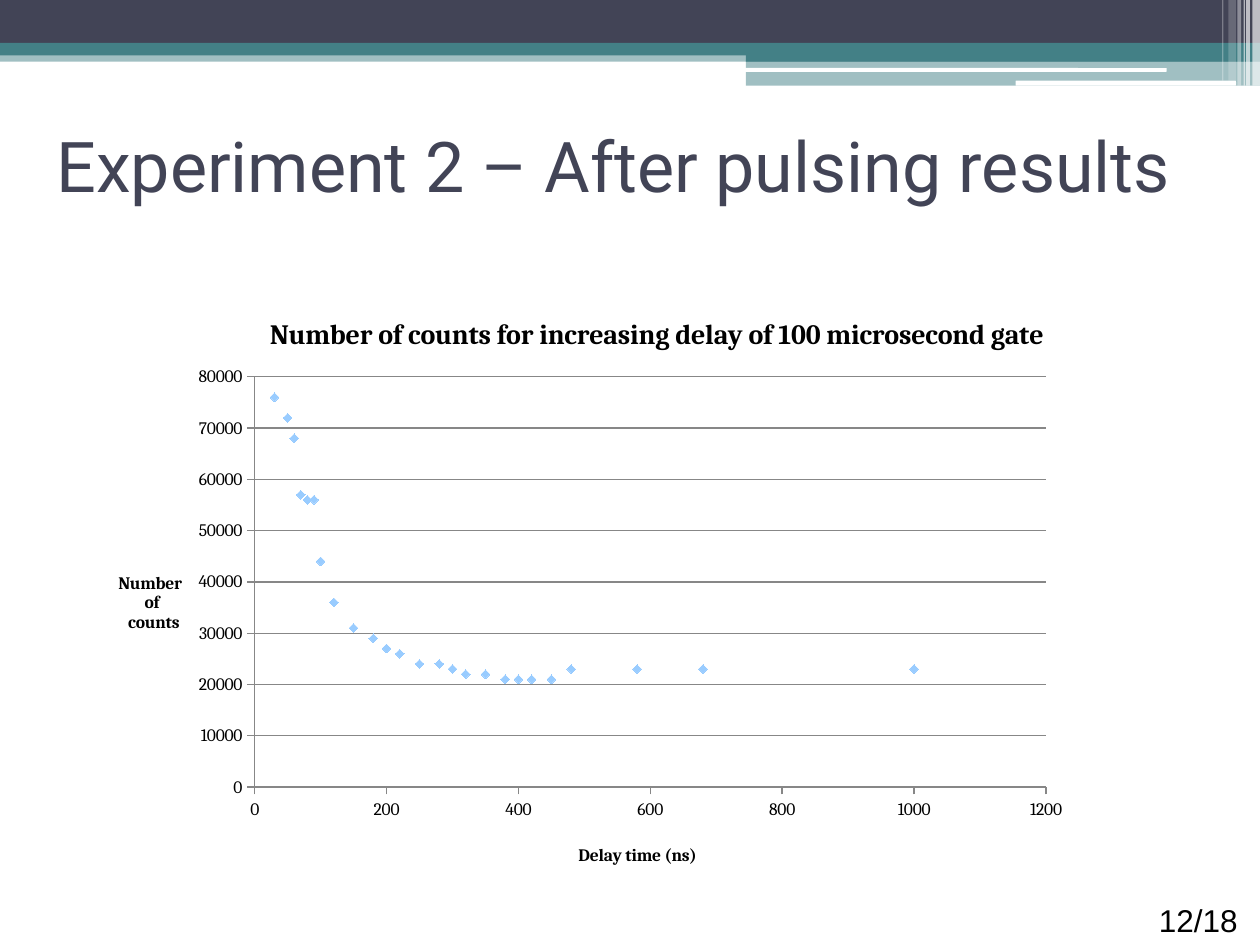
"""Build the after pulsing results slide with its scatter chart."""
import lxml.etree
import pptx
import pptx.chart.data
import pptx.dml.color
import pptx.enum.chart
import pptx.enum.shapes
import pptx.enum.text
import pptx.oxml
import pptx.oxml.ns
import pptx.util

Inches = pptx.util.Inches
Pt = pptx.util.Pt
qn = pptx.oxml.ns.qn


def paint(fill, color, alpha=100):
    fill.solid()
    fill.fore_color.rgb = pptx.dml.color.RGBColor.from_string(color)
    if alpha < 100:
        node = fill._xPr.find(".//" + qn("a:srgbClr"))
        lxml.etree.SubElement(node, qn("a:alpha")).set("val", str(alpha * 1000))


def place(node, index, **spots):
    old = node.find(qn("c:layout"))
    if old is not None:
        node.remove(old)
    layout = pptx.oxml.parse_xml(f'<c:layout {pptx.oxml.ns.nsdecls("c")}/>')
    manual = lxml.etree.SubElement(layout, qn("c:manualLayout"))
    for tag, value in spots.items():
        lxml.etree.SubElement(manual, qn("c:" + tag)).set("val", str(value))
    node.insert(index, layout)


deck = pptx.Presentation()
deck.slide_width, deck.slide_height = Inches(10), Inches(7.5)
slide = deck.slides.add_slide(deck.slide_layouts[6])

bars = [
    (0, 0.4, 10, 0.09, "438086", 50),
    (0, 0, 10, 0.34, "424456", 100),
    (0, 0.34, 10, 0.1, "438086", 100),
    (5.92, 0.39, 4.08, 0.1, "438086", 100),
    (5.92, 0.48, 4.08, 0.2, "438086", 50),
    (5.91, 0.54, 3.35, 0.03, "FFFFFF", 100),
    (8.06, 0.64, 1.75, 0.04, "FFFFFF", 100),
    (9.94, 0, 0.06, 0.68, "FFFFFF", 65),
    (9.89, 0, 0.03, 0.68, "FFFFFF", 65),
    (9.87, 0, 0.01, 0.68, "FFFFFF", 60),
    (9.82, 0, 0.03, 0.68, "FFFFFF", 40),
    (9.75, 0, 0.06, 0.64, "FFFFFF", 20),
    (9.7, 0, 0.01, 0.64, "FFFFFF", 30),
]
kinds = pptx.enum.shapes.MSO_SHAPE
for left, top, width, height, color, alpha in bars:
    solid = color == "FFFFFF" and alpha == 100
    kind = kinds.ROUNDED_RECTANGLE if solid else kinds.RECTANGLE
    bar = slide.shapes.add_shape(
        kind, Inches(left), Inches(top), Inches(width), Inches(height))
    bar.shadow.inherit = False
    bar.line.fill.background()
    paint(bar.fill, color, alpha)

anchors = pptx.enum.text.MSO_ANCHOR
labels = [
    ("Experiment 2 – After pulsing results", (0.35, 0.68, 9.33, 1.25),
     40, "Roboto", "424456", anchors.MIDDLE),
    ("12/18", (9.1, 7.1, 0.9, 0.4), 18, "Arial", "000000", anchors.TOP),
]
for text, spot, size, face, color, anchor in labels:
    box = slide.shapes.add_textbox(*map(Inches, spot))
    frame = box.text_frame
    frame.word_wrap = True
    frame.vertical_anchor = anchor
    frame.text = text
    font = frame.paragraphs[0].runs[0].font
    font.size, font.name = Pt(size), face
    paint(font.fill, color)

delays = [30, 50, 60, 70, 80, 90, 100, 120, 150, 180, 200, 220, 250, 280, 300,
          320, 350, 380, 400, 420, 450, 480, 580, 680, 1000]
counts = [76, 72, 68, 57, 56, 56, 44, 36, 31, 29, 27, 26, 24, 24, 23,
          22, 22, 21, 21, 21, 21, 23, 23, 23, 23]
data = pptx.chart.data.XyChartData()
series = data.add_series("Series 1")
for delay, count in zip(delays, counts):
    series.add_data_point(delay, count * 1000)
chart = slide.shapes.add_chart(
    pptx.enum.chart.XL_CHART_TYPE.XY_SCATTER, Inches(0.67), Inches(2.33),
    Inches(7.95), Inches(4.72), data).chart
chart.has_legend = False
chart.font.name, chart.font.size = "Cambria", Pt(10)
paint(chart.font.fill, "000000")
chart.plots[0].vary_by_categories = False

dots = chart.plots[0].series[0]
dots.smooth = False
dots.format.line.fill.background()
dots.marker.style = pptx.enum.chart.XL_MARKER_STYLE.DIAMOND
dots.marker.size = 5
paint(dots.marker.format.fill, "99CCFF")
dots.marker.format.line.fill.background()

across, up = chart.category_axis, chart.value_axis
across.has_major_gridlines, up.has_major_gridlines = False, True
paint(up.major_gridlines.format.line.fill, "878787")
for axis, limit, step in [(across, 1200, 200), (up, 80000, 10000)]:
    axis.minimum_scale, axis.maximum_scale, axis.major_unit = 0, limit, step
    axis.major_tick_mark = pptx.enum.chart.XL_TICK_MARK.OUTSIDE
    axis.minor_tick_mark = pptx.enum.chart.XL_TICK_MARK.NONE
    axis.tick_labels.number_format = "General"
    axis.tick_labels.number_format_is_linked = False
    paint(axis.format.line.fill, "878787")

titles = [
    (chart.chart_title, 16, 0.18, 0.03,
     "Number of counts for increasing delay of 100 microsecond gate"),
    (across.axis_title, 10, 0.49, 0.92, "Delay time (ns)"),
    (up.axis_title, 10, 0.03, 0.46, "Number \nof\n counts"),
]
for title, size, left, top, text in titles:
    frame = title.text_frame
    frame.text = text
    frame._txBody.find(qn("a:bodyPr")).set("rot", "0")
    for para in frame.paragraphs:
        para.alignment = pptx.enum.text.PP_ALIGN.CENTER
        font = para.runs[0].font
        font.size, font.name, font.bold = Pt(size), "Cambria", True
        paint(font.fill, "000000")
    place(title._element, 1, xMode="edge", yMode="edge", x=left, y=top)

area = chart._chartSpace.find(".//" + qn("c:plotArea"))
place(area, 0, layoutTarget="inner", xMode="edge", yMode="edge",
      x=0.17, y=0.14, w=0.79, h=0.69)

deck.save("out.pptx")
